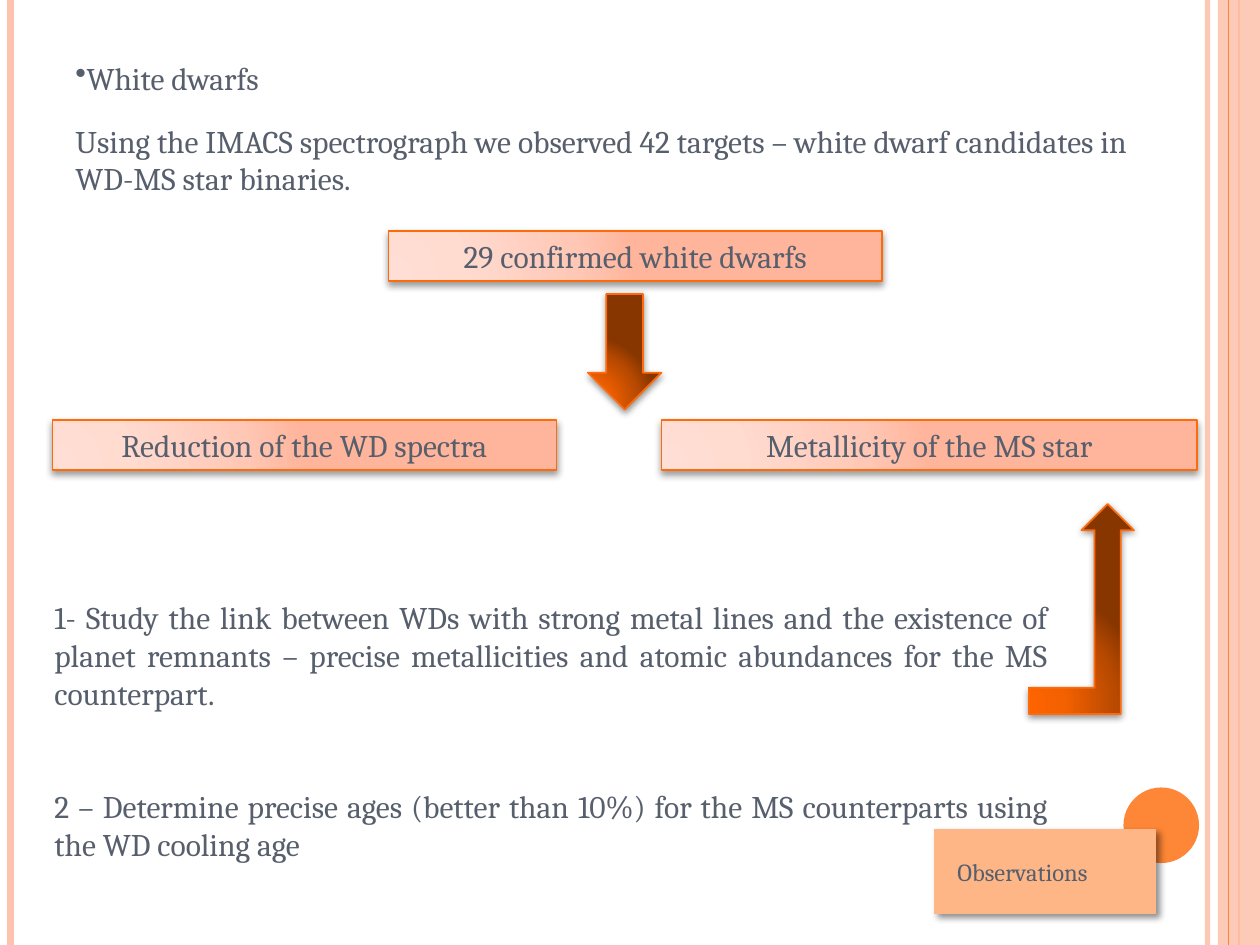
from pptx import Presentation
from pptx import util as u
from pptx.dml.color import RGBColor
from pptx.enum import shapes, text
from pptx.oxml import parse_xml
from pptx.oxml.ns import nsdecls

# The slide is a grid of 120 columns by 90 rows, 12 cells to the inch
COLS, ROWS = 120, 90
CELL = u.Inches(1) / 12

INK = RGBColor(0x57, 0x5F, 0x6D)
ORANGE = RGBColor(0xFE, 0x86, 0x37)
OUTLINE = RGBColor(0xFF, 0x6B, 0x0A)
PEACH = RGBColor(0xFE, 0xC3, 0xAE)
TAG = RGBColor(0xFE, 0xB6, 0x87)
STOPS = (0, 30, 75, 100)
PALE = ("FFDED5", "FFDBD0", "FFC8B6", "FFB59B")
DARK = ("FD6400", "F46100", "B74900", "873600")

# Shadows: opacity %, blur pt, distance pt, angle
BOX_SHADOW = (40, 4, 2, 90)
ARROW_SHADOW = (42, 4, 1.6, 90)
TAG_SHADOW = (43, 4, 3, 45)

# Rails: column, width pt, colour, opacity %
RAILS_BELOW = [(115, 3, PEACH, 93), (1, 4.5, PEACH, 100), (118, 1.5, ORANGE, 100)]
RAILS_ABOVE = [(117, 0.75, ORANGE, 100)]

# Texts: column, row, columns, rows, format, paragraphs
LEFT, CENTER, JUSTIFY = (text.PP_ALIGN.LEFT, text.PP_ALIGN.CENTER,
                         text.PP_ALIGN.JUSTIFY)
TEXTS = [
    (90, 81, 21, 4.1, {"size": 14}, ["Observations"]),
    (6, 5, 40, 4.8, {"bullet": "•"}, ["White dwarfs"]),
    (6, 11, 104, 8.5, {},
     ["Using the IMACS spectrograph we observed 42 targets – white dwarf "
      "candidates in WD-MS star binaries."]),
    (4, 56.4, 97, 26.6, {"align": JUSTIFY, "gap": 43},
     ["1- Study the link between WDs with strong metal lines and the existence "
      "of planet remnants – precise metallicities and atomic abundances for "
      "the MS counterpart.",
      "2 – Determine precise ages (better than 10%) for the MS counterparts "
      "using the WD cooling age"]),
]

# Flow boxes: column, row, columns, label
BOX_ROWS = 4.8
BOXES = [
    (37, 22, 47, "29 confirmed white dwarfs"),
    (5, 40, 48, "Reduction of the WD spectra"),
    (63, 40, 51, "Metallicity of the MS star"),
]
# Flow arrows: preset, column, row, columns, rows
ARROWS = [
    (shapes.MSO_SHAPE.DOWN_ARROW, 56, 28, 7, 11),
    (shapes.MSO_SHAPE.BENT_UP_ARROW, 98, 48, 10, 20),
]


def cells(*counts):
    return [u.Emu(round(n * CELL)) for n in counts]


def set_opacity(color_parent, percent):
    for color in color_parent.xpath(".//a:solidFill/a:srgbClr"):
        color.append(parse_xml(
            f'<a:alpha {nsdecls("a")} val="{percent * 1000}"/>'))


def add_rail(column, width, color, opacity):
    x, bottom = cells(column, ROWS)
    rail = slide.shapes.add_connector(shapes.MSO_CONNECTOR.STRAIGHT, x, 0, x, bottom)
    rail.line.color.rgb = color
    rail.line.width = u.Pt(width)
    if opacity < 100:
        set_opacity(rail.line._ln, opacity)
    rail._element.spPr.append(parse_xml(f'<a:effectLst {nsdecls("a")}/>'))


def add_solid(preset, area, color):
    solid = slide.shapes.add_shape(preset, *cells(*area))
    solid.shadow.inherit = False
    solid.fill.solid()
    solid.fill.fore_color.rgb = color
    solid.line.fill.background()
    return solid


def add_shadow(shape, opacity, blur, distance, angle):
    shape.shadow.inherit = False
    effects = shape._element.spPr.xpath("a:effectLst")[0]
    effects.append(parse_xml(
        f'<a:outerShdw {nsdecls("a")} blurRad="{u.Pt(blur)}" dist="{u.Pt(distance)}" '
        f'dir="{angle * 60000}" rotWithShape="0"><a:srgbClr val="000000">'
        f'<a:alpha val="{opacity * 1000}"/></a:srgbClr></a:outerShdw>'))


def add_gradient_shape(preset, area, colors, shadow):
    shape = slide.shapes.add_shape(preset, *cells(*area))
    stops = "".join(f'<a:gs pos="{pos * 1000}"><a:srgbClr val="{color}"/></a:gs>'
                    for pos, color in zip(STOPS, colors))
    geometry = shape._element.spPr.xpath("a:prstGeom")[0]
    geometry.addnext(parse_xml(
        f'<a:gradFill {nsdecls("a")} rotWithShape="1"><a:gsLst>{stops}</a:gsLst>'
        '<a:path path="circle"><a:fillToRect l="5000" t="100000" r="120000" '
        'b="10000"/></a:path></a:gradFill>'))
    shape.line.color.rgb = OUTLINE
    shape.line.width = u.Pt(1)
    add_shadow(shape, *shadow)
    return shape


def write(shape, paragraphs, size=18, align=LEFT, bullet=None, gap=0):
    frame = shape.text_frame
    frame.word_wrap = True
    frame.auto_size = text.MSO_AUTO_SIZE.SHAPE_TO_FIT_TEXT
    for index, words in enumerate(paragraphs):
        para = frame.add_paragraph() if index else frame.paragraphs[0]
        para.alignment = align
        if index:
            para.space_before = u.Pt(gap)
        if bullet:
            para._p.get_or_add_pPr().append(parse_xml(
                f'<a:buChar {nsdecls("a")} char="{bullet}"/>'))
        run = para.add_run()
        run.text = words
        for key, value in {"size": u.Pt(size), "name": "Cambria"}.items():
            setattr(run.font, key, value)
        run.font.color.rgb = INK


deck = Presentation()
deck.slide_width, deck.slide_height = cells(COLS, ROWS)
slide = deck.slides.add_slide(deck.slide_layouts[6])

# Side rails, band and disc
for rail in RAILS_BELOW:
    add_rail(*rail)
band = add_solid(shapes.MSO_SHAPE.RECTANGLE, (116, 0, 4, ROWS), PEACH)
set_opacity(band._element.spPr, 87)
for rail in RAILS_ABOVE:
    add_rail(*rail)
add_solid(shapes.MSO_SHAPE.OVAL, (107, 75, 7.2, 7.2), ORANGE)

# Section tag
tag = add_solid(shapes.MSO_SHAPE.RECTANGLE, (89, 79, 21, 8), TAG)
tag.line.color.rgb = TAG
tag.line.width = u.Pt(1)
add_shadow(tag, *TAG_SHADOW)

# Running text
for *area, style, paragraphs in TEXTS:
    write(slide.shapes.add_textbox(*cells(*area)), paragraphs, **style)

# Flow boxes and arrows
for column, row, width, label in BOXES:
    box = add_gradient_shape(shapes.MSO_SHAPE.RECTANGLE,
                             (column, row, width, BOX_ROWS), PALE, BOX_SHADOW)
    write(box, [label], align=CENTER)
for preset, *area in ARROWS:
    add_gradient_shape(preset, area, DARK, ARROW_SHADOW)

deck.save("out.pptx")
